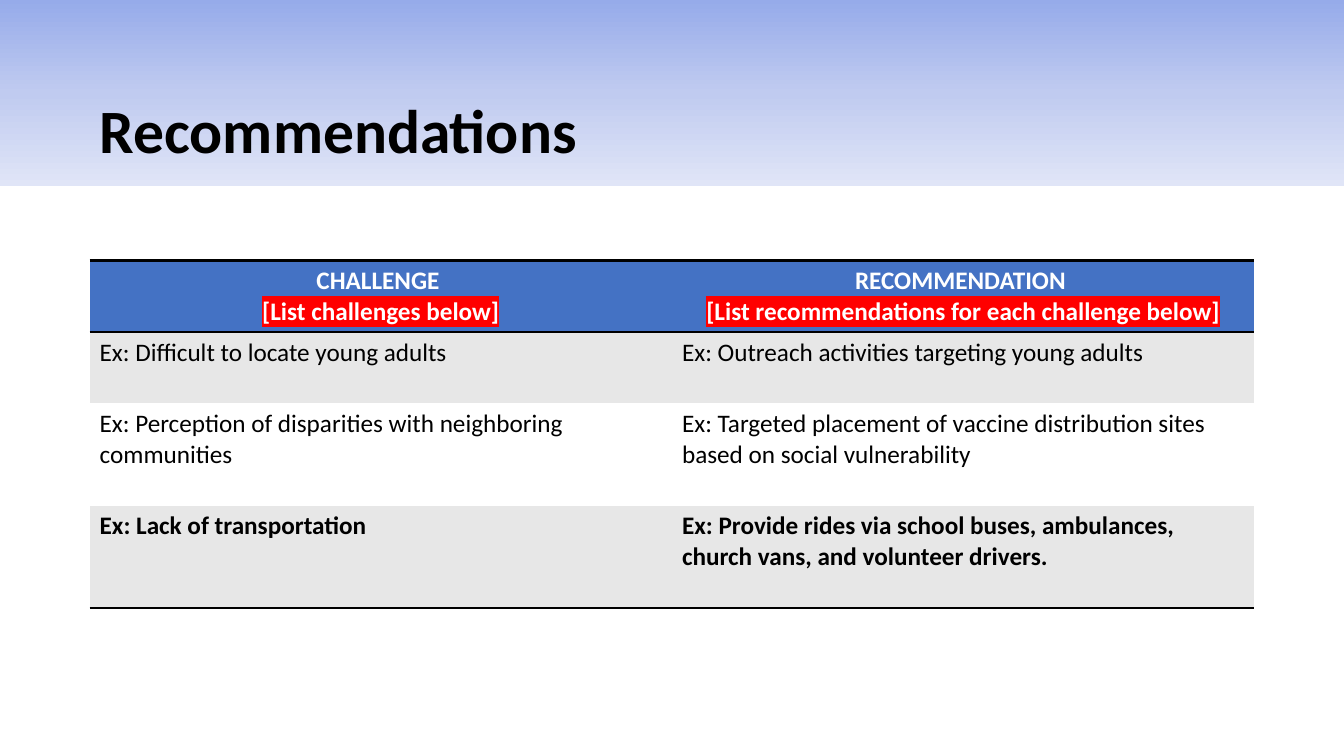
"""Build the Recommendations slide with its table of challenges."""
from copy import deepcopy

from lxml import etree
from pptx import Presentation
from pptx.dml.color import RGBColor
from pptx.enum.shapes import MSO_SHAPE
from pptx.enum.text import MSO_ANCHOR, MSO_AUTO_SIZE, PP_ALIGN
from pptx.oxml.ns import qn
from pptx.util import Pt

RECTANGLE = MSO_SHAPE.RECTANGLE
BOTTOM = MSO_ANCHOR.BOTTOM
NO_FIT = MSO_AUTO_SIZE.NONE
LEFT, CENTER = PP_ALIGN.LEFT, PP_ALIGN.CENTER

FONT = "Calibri"
COLORS = {
    "black": "000000",
    "white": "FFFFFF",
    "header": "4472C4",
    "band": "E7E7E7",
    "prompt": "FF0000",
    "sky_top": "96ABEA",
    "sky_middle": "C0CBF0",
    "sky_bottom": "E0E5F7",
}
NO_TABLE_STYLE = "{2D5ABB26-0587-4C30-8999-92F81FD0307C}"

SLIDE_W, SLIDE_H = 960, 540
MARGIN, CONTENT_W = 64, 832
ROW_HEIGHTS = (51, 51, 73, 73)

HEADERS = (
    ("CHALLENGE ", "[List challenges below]"),
    ("RECOMMENDATION ", "[List recommendations for each challenge below]"),
)
ROWS = (
    ("Ex: Difficult to locate young adults",
     "Ex: Outreach activities targeting young adults"),
    ("Ex: Perception of disparities with neighboring communities",
     "Ex: Targeted placement of vaccine distribution sites based on social vulnerability"),
    ("Ex: Lack of transportation",
     "Ex: Provide rides via school buses, ambulances, church vans, and volunteer drivers."),
)


def rgb(name):
    """Return the named colour."""
    return RGBColor.from_string(COLORS[name])


def add_run(p, text, size, color, bold=False, highlight=None):
    """Add one formatted run to a paragraph."""
    r = p.add_run()
    r.text = text
    r.font.size = Pt(size)
    r.font.bold = bold
    r.font.color.rgb = rgb(color)
    r.font.name = FONT
    if highlight:
        mark = etree.Element(qn("a:highlight"))
        etree.SubElement(mark, qn("a:srgbClr"), val=COLORS[highlight])
        r.font._element.find(qn("a:solidFill")).addnext(mark)


def add_gradient_band(s, height, names):
    """Add the full-width band, shaded from top to bottom."""
    sp = s.shapes.add_shape(RECTANGLE, 0, 0, Pt(SLIDE_W), Pt(height))
    sp.shadow.inherit = False
    sp.line.fill.background()
    sp.fill.gradient()
    sp.fill.gradient_angle = 270
    stop_list = sp._element.spPr.find(".//" + qn("a:gsLst"))
    stop_list.insert(1, deepcopy(stop_list[0]))
    for i, (stop, name) in enumerate(zip(sp.fill.gradient_stops, names)):
        stop.position = i / (len(names) - 1)
        stop.color.rgb = rgb(name)
    s.shapes._spTree.insert(2, sp._element)


def set_title(s, text):
    """Place and fill the title."""
    sp = s.shapes.title
    sp.left, sp.top, sp.width, sp.height = Pt(MARGIN), Pt(46), Pt(CONTENT_W), Pt(76)
    tf = sp.text_frame
    tf.auto_size = NO_FIT
    tf.word_wrap = True
    tf.vertical_anchor = BOTTOM
    p = tf.paragraphs[0]
    p.alignment = LEFT
    p.line_spacing = 0.85
    add_run(p, text, 44, "black", bold=True)


def fill_cell(cell, color):
    """Give a cell a solid fill."""
    cell.fill.solid()
    cell.fill.fore_color.rgb = rgb(color)


def add_rules(cell, tags, width=2):
    """Draw black border lines on the given sides of a cell."""
    tc_pr = cell._tc.get_or_add_tcPr()
    for i, tag in enumerate(tags):
        ln = etree.Element(qn(tag), w=str(Pt(width)))
        fill = etree.SubElement(ln, qn("a:solidFill"))
        etree.SubElement(fill, qn("a:srgbClr"), val=COLORS["black"])
        tc_pr.insert(i, ln)


def add_header_cell(cell, label, prompt):
    """Write a column heading with its highlighted prompt."""
    fill_cell(cell, "header")
    add_rules(cell, ("a:lnT", "a:lnB"))
    tf = cell.text_frame
    p = tf.paragraphs[0]
    p.alignment = CENTER
    add_run(p, label, 18, "white", bold=True)
    p = tf.add_paragraph()
    p.alignment = CENTER
    add_run(p, prompt, 18, "white", bold=True, highlight="prompt")


def add_recommendation_table(s):
    """Add the table of challenges and recommendations."""
    frame = s.shapes.add_table(len(ROW_HEIGHTS), len(HEADERS), Pt(MARGIN), Pt(186),
                               Pt(CONTENT_W), Pt(sum(ROW_HEIGHTS)))
    table = frame.table
    table._tbl.tblPr.find(qn("a:tableStyleId")).text = NO_TABLE_STYLE
    for row, height in zip(table.rows, ROW_HEIGHTS):
        row.height = Pt(height)
    for col, (label, prompt) in enumerate(HEADERS):
        add_header_cell(table.cell(0, col), label, prompt)
    for i, texts in enumerate(ROWS, 1):
        last = i == len(ROWS)
        for col, text in enumerate(texts):
            cell = table.cell(i, col)
            fill_cell(cell, "band" if i % 2 else "white")
            add_run(cell.text_frame.paragraphs[0], text, 18, "black", bold=last)
            if last:
                add_rules(cell, ("a:lnB",))


def main():
    """Build and save the slide."""
    prs = Presentation()
    prs.slide_width, prs.slide_height = Pt(SLIDE_W), Pt(SLIDE_H)
    s = prs.slides.add_slide(prs.slide_layouts[5])
    add_gradient_band(s, 133, ("sky_top", "sky_middle", "sky_bottom"))
    set_title(s, "Recommendations")
    add_recommendation_table(s)
    prs.save("out.pptx")


if __name__ == "__main__":
    main()
